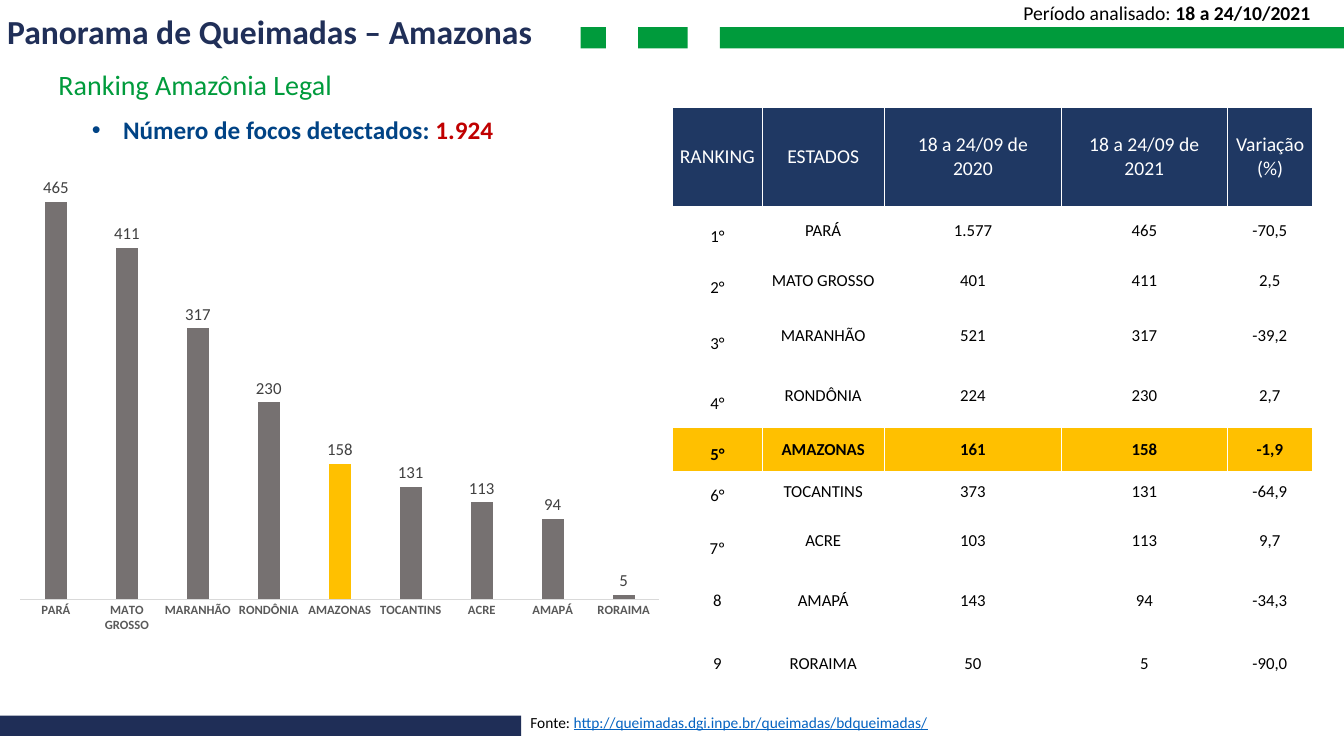
from lxml import etree
from pptx import Presentation
from pptx.chart.data import CategoryChartData
from pptx.dml.color import RGBColor
from pptx.enum.chart import XL_CHART_TYPE, XL_LABEL_POSITION, XL_TICK_MARK
from pptx.enum.shapes import MSO_SHAPE
from pptx.enum.text import MSO_ANCHOR, MSO_AUTO_SIZE, PP_ALIGN
from pptx.oxml.ns import qn
from pptx.util import Inches, Pt

COLUMN_CLUSTERED = XL_CHART_TYPE.COLUMN_CLUSTERED
OUTSIDE_END = XL_LABEL_POSITION.OUTSIDE_END
NO_TICK = XL_TICK_MARK.NONE
RECTANGLE = MSO_SHAPE.RECTANGLE
MIDDLE = MSO_ANCHOR.MIDDLE
NO_AUTOFIT = MSO_AUTO_SIZE.NONE
LEFT, CENTER = PP_ALIGN.LEFT, PP_ALIGN.CENTER

GREEN = RGBColor(0x00, 0x9B, 0x3C)
NAVY = RGBColor(0x1F, 0x2E, 0x57)
TITLE_NAVY = RGBColor(0x20, 0x2F, 0x58)
HEADER_NAVY = RGBColor(0x1F, 0x38, 0x63)
BLUE = RGBColor(0x00, 0x43, 0x85)
LINK_BLUE = RGBColor(0x05, 0x63, 0xC1)
RED = RGBColor(0xC0, 0x00, 0x00)
AMBER = RGBColor(0xFF, 0xC0, 0x00)
BAR_GRAY = RGBColor(0x76, 0x71, 0x71)
AXIS_GRAY = RGBColor(0xD9, 0xD9, 0xD9)
CATEGORY_GRAY = RGBColor(0x59, 0x59, 0x59)
LABEL_GRAY = RGBColor(0x40, 0x40, 0x40)
BLACK = RGBColor(0x00, 0x00, 0x00)
WHITE = RGBColor(0xFF, 0xFF, 0xFF)

HEADERS = ["RANKING", "ESTADOS", "18 a 24/09 de\n2020", "18 a 24/09 de\n2021", "Variação (%)"]
STATES = [
    ("1°", "PARÁ", "1.577", 465, "-70,5"),
    ("2°", "MATO GROSSO", "401", 411, "2,5"),
    ("3°", "MARANHÃO", "521", 317, "-39,2"),
    ("4°", "RONDÔNIA", "224", 230, "2,7"),
    ("5°", "AMAZONAS", "161", 158, "-1,9"),
    ("6°", "TOCANTINS", "373", 131, "-64,9"),
    ("7º", "ACRE", "103", 113, "9,7"),
    ("8", "AMAPÁ", "143", 94, "-34,3"),
    ("9", "RORAIMA", "50", 5, "-90,0"),
]
HIGHLIGHT = 4
COLUMN_WIDTHS = [0.89, 1.21, 1.76, 1.64, 0.85]
ROW_HEIGHTS = [0.99, 0.47, 0.52, 0.57, 0.63, 0.44, 0.4, 0.56, 0.63, 0.63]
RANK_TOP_MARGINS = [0.12, 0.15, 0.17, 0.17, 0.1, 0.08, 0.17, 0.01, 0.01]


class SlideBuilder:
    """Hold the font and current slide and add each kind of element to it."""

    def __init__(self, slide, font_name):
        self.slide = slide
        self.font_name = font_name

    def style(self, font, size, color, bold=False):
        font.name = self.font_name
        font.size = Pt(size)
        font.color.rgb = color
        font.bold = bold

    def frame(self, text_frame, top_margin):
        text_frame.word_wrap = True
        text_frame.auto_size = NO_AUTOFIT
        text_frame.margin_left = text_frame.margin_right = text_frame.margin_bottom = 0
        text_frame.margin_top = Inches(top_margin)

    def title(self, text, left, top, width, height):
        title = self.slide.shapes.title
        title.left, title.top = Inches(left), Inches(top)
        title.width, title.height = Inches(width), Inches(height)
        self.frame(title.text_frame, 0.1)
        title.text_frame.vertical_anchor = MIDDLE
        title.text_frame.text = text
        paragraph = title.text_frame.paragraphs[0]
        paragraph.alignment = LEFT
        self.style(paragraph.runs[0].font, 24, TITLE_NAVY, True)

    def bar(self, left, top, width, height, color):
        shape = self.slide.shapes.add_shape(
            RECTANGLE, Inches(left), Inches(top), Inches(width), Inches(height))
        shape.shadow.inherit = False
        shape.fill.solid()
        shape.fill.fore_color.rgb = color
        shape.line.fill.background()

    def text(self, left, top, width, height, top_margin, *lines):
        box = self.slide.shapes.add_textbox(
            Inches(left), Inches(top), Inches(width), Inches(height))
        self.frame(box.text_frame, top_margin)
        for index, line in enumerate(lines):
            paragraph = box.text_frame.add_paragraph() if index else box.text_frame.paragraphs[0]
            for text, size, color, bold in line:
                run = paragraph.add_run()
                run.text = text
                self.style(run.font, size, color, bold)
            paragraph._p.get_or_add_pPr().set("marL", str(Inches(0.01)))
        return box.text_frame.paragraphs

    def bullet(self, paragraph, margin, indent, space_before):
        paragraph.space_before = Pt(space_before)
        properties = paragraph._p.get_or_add_pPr()
        properties.set("marL", str(Inches(margin)))
        properties.set("indent", str(Inches(indent)))
        etree.SubElement(properties, qn("a:buFont"), typeface="Arial")
        etree.SubElement(properties, qn("a:buChar"), char="•")

    def cell(self, cell, text, size, color, bold, fill, top_margin):
        properties = cell._tc.get_or_add_tcPr()
        for side in ("a:lnL", "a:lnR", "a:lnT", "a:lnB"):
            line = etree.SubElement(properties, qn(side), w=str(Pt(0.5)))
            solid = etree.SubElement(line, qn("a:solidFill"))
            etree.SubElement(solid, qn("a:srgbClr"), val=str(WHITE))
        if fill is None:
            cell.fill.background()
        else:
            cell.fill.solid()
            cell.fill.fore_color.rgb = fill
        cell.margin_left = cell.margin_right = cell.margin_bottom = 0
        cell.margin_top = Inches(top_margin)
        cell.vertical_anchor = MIDDLE
        cell.text_frame.text = text
        for paragraph in cell.text_frame.paragraphs:
            paragraph.alignment = CENTER
            self.style(paragraph.runs[0].font, size, color, bold)

    def table(self, left, top):
        table = self.slide.shapes.add_table(
            len(ROW_HEIGHTS), len(COLUMN_WIDTHS), Inches(left), Inches(top),
            Inches(sum(COLUMN_WIDTHS)), Inches(sum(ROW_HEIGHTS))).table
        table.first_row = table.horz_banding = False
        for column, width in zip(table.columns, COLUMN_WIDTHS):
            column.width = Inches(width)
        for row, height in zip(table.rows, ROW_HEIGHTS):
            row.height = Inches(height)
        for column, header in enumerate(HEADERS):
            self.cell(table.cell(0, column), header, 14, WHITE, False, HEADER_NAVY, 0)
        for index, state in enumerate(STATES):
            highlighted = index == HIGHLIGHT
            for column, value in enumerate(state):
                margin = 0.01 if column else RANK_TOP_MARGINS[index]
                self.cell(table.cell(index + 1, column), str(value), 12, BLACK,
                          highlighted, AMBER if highlighted else None, margin)
        variation = table.cell(0, len(HEADERS) - 1).text_frame.paragraphs[0]
        variation.alignment = LEFT
        properties = variation._p.get_or_add_pPr()
        properties.set("marL", str(Inches(0.3)))
        properties.set("indent", str(Inches(-0.21)))

    def chart(self, left, top, width, height):
        data = CategoryChartData()
        data.categories = [state[1] for state in STATES]
        data.add_series("Focos 2021", [state[3] for state in STATES])
        chart = self.slide.shapes.add_chart(
            COLUMN_CLUSTERED, Inches(left), Inches(top), Inches(width), Inches(height), data).chart
        self.style(chart.font, 10, BLACK)
        chart.has_legend = chart.has_title = False
        chart.value_axis.visible = False
        chart.value_axis.has_major_gridlines = False
        chart.value_axis.minimum_scale, chart.value_axis.maximum_scale = 0, 500
        axis = chart.category_axis
        axis.major_tick_mark = NO_TICK
        axis.format.line.color.rgb = AXIS_GRAY
        axis.format.line.width = Pt(0.75)
        self.style(axis.tick_labels.font, 9, CATEGORY_GRAY, True)
        plot = chart.plots[0]
        plot.gap_width, plot.overlap, plot.vary_by_categories = 219, -27, False
        plot.has_data_labels = True
        plot.data_labels.show_value = True
        plot.data_labels.position = OUTSIDE_END
        self.style(plot.data_labels.font, 12, LABEL_GRAY)
        series = plot.series[0]
        for part, color in ((series, BAR_GRAY), (series.points[HIGHLIGHT], AMBER)):
            part.format.fill.solid()
            part.format.fill.fore_color.rgb = color


def main():
    presentation = Presentation()
    presentation.slide_width, presentation.slide_height = Inches(13.33), Inches(7.5)
    slide = presentation.slides.add_slide(presentation.slide_layouts[5])
    builder = SlideBuilder(slide, "Calibri")
    for left, width in ((7.14, 6.19), (6.33, 0.49), (5.76, 0.25)):
        builder.bar(left, 0.27, width, 0.21, GREEN)
    builder.bar(0, 7.1, 5.17, 0.2, NAVY)
    ranking = builder.text(
        0.57, 0.51, 4.69, 0.95, 0.16,
        [("Ranking Amazônia Legal", 20, GREEN, False)],
        [("Número de focos detectados: ", 18, BLUE, True), ("1.924", 18, RED, True)])
    builder.bullet(ranking[1], 0.65, -0.31, 9.7)
    builder.table(6.67, 1.06)
    builder.text(10.14, 0, 3.19, 0.25, 0.01,
                 [("Período analisado: ", 14, BLACK, False), ("18 a 24/10/2021", 14, BLACK, True)])
    source = builder.text(
        5.25, 7.06, 3.96, 0.21, 0.01,
        [("Fonte: ", 11, BLACK, False),
         ("http://queimadas.dgi.inpe.br/queimadas/bdqueimadas/", 11, LINK_BLUE, False)])
    source[0].runs[1].font.underline = True
    builder.title("Panorama de Queimadas – Amazonas", 0.07, 0, 7.1, 0.51)
    builder.chart(0.07, 1.61, 6.6, 4.76)
    presentation.save("out.pptx")


if __name__ == "__main__":
    main()
